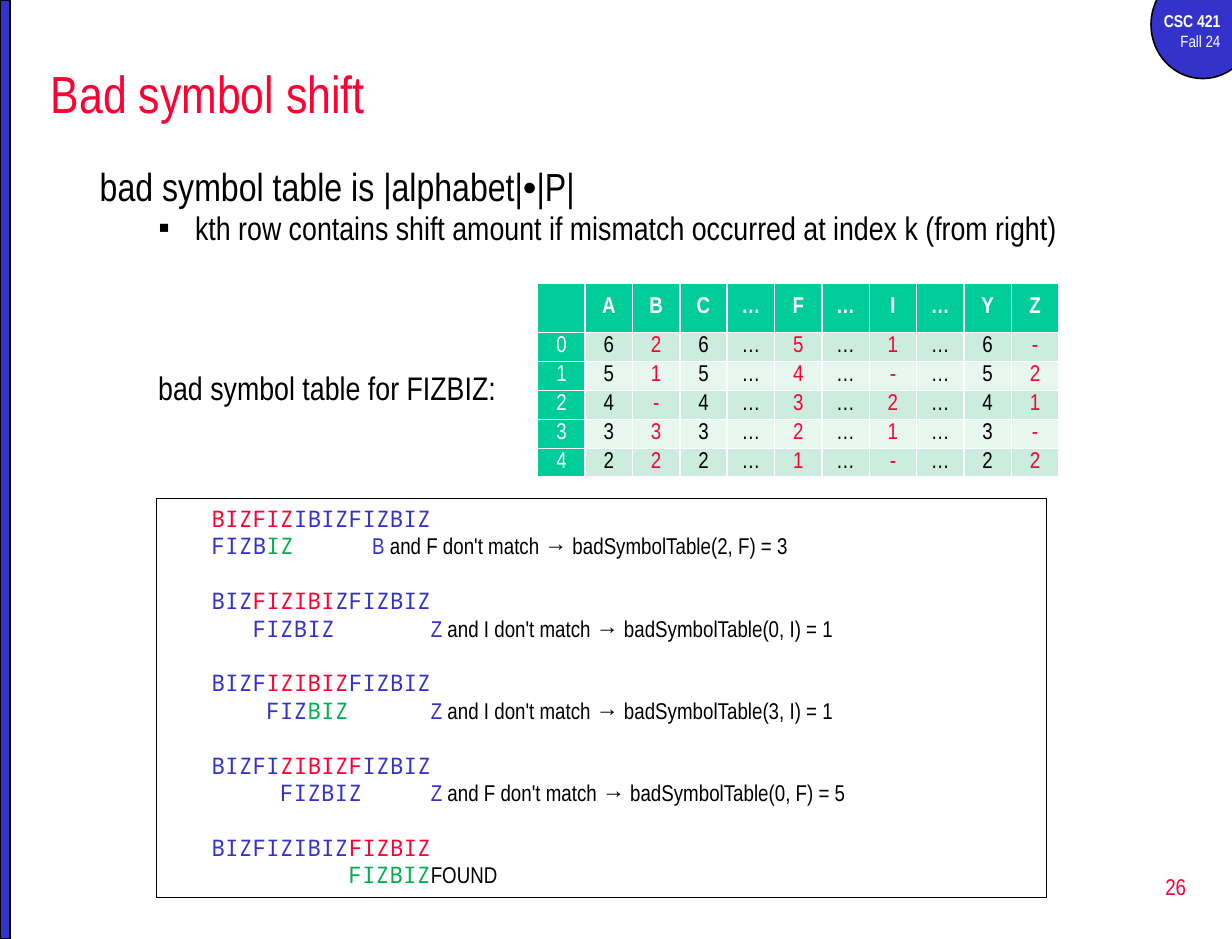
from lxml.etree import SubElement
from pptx import Presentation
from pptx.dml.color import RGBColor
from pptx.enum.shapes import MSO_SHAPE as Shape
from pptx.enum.text import MSO_ANCHOR as Anchor, MSO_AUTO_SIZE as AutoSize, PP_ALIGN as Align
from pptx.oxml.ns import qn
from pptx.util import Pt

COLORS = {"red": "FF0033", "blue": "3333CC", "green": "00B050", "black": "000000",
          "white": "FFFFFF", "head": "00CC99", "odd": "CBECDE", "even": "E7F6EF"}
NARROW, MONO = "Arial Narrow", "Noto Sans Mono"
TEXT, PATTERN = "BIZFIZIBIZFIZBIZ", "FIZBIZ"
CHAR_WIDTH, LINE_HEIGHT = 8.4, 16.8
SYMBOLS = ["", *"ABC…F…I…YZ"]
SHIFTS = ["0626…5…1…6-", "1515…4…-…52", "24-4…3…2…41", "3333…2…1…3-", "4222…1…-…22"]
RED_COLUMNS = {"B", "F", "I", "Z"}
TRACE = [
    (0, 2, "B", " and F don't match → badSymbolTable(2, F) = 3"),
    (3, 0, "Z", " and I don't match → badSymbolTable(0, I) = 1"),
    (4, 3, "Z", " and I don't match → badSymbolTable(3, I) = 1"),
    (5, 0, "Z", " and F don't match → badSymbolTable(0, F) = 5"),
    (10, 6, "", "FOUND"),
]


def color(name):
    return RGBColor.from_string(COLORS[name])


def apply(target, values):
    for name, value in values.items():
        setattr(target, name, value)


class SlideWriter:
    def __init__(self, page):
        self.page = page

    def span(self, para, text, size, ink="black", face=NARROW, bold=False):
        span = para.add_run()
        span.text = text
        apply(span.font, {"name": face, "size": Pt(size), "bold": bold})
        span.font.color.rgb = color(ink)

    def para(self, frame, spans, indent=None, bullet=None, **values):
        first = frame.paragraphs[0]
        para = frame.add_paragraph() if first.runs else first
        apply(para, {"alignment": Align.LEFT, **values})
        props = para._p.get_or_add_pPr()
        if indent:
            for name, value in zip(("marL", "indent"), indent):
                props.set(name, str(int(Pt(value))))
        if bullet:
            SubElement(props, qn("a:buFont")).set("typeface", "Arial")
            SubElement(props, qn("a:buChar")).set("char", bullet)
        else:
            SubElement(props, qn("a:buNone"))
        for span in spans:
            self.span(para, *span)

    def frame(self, box, anchor=Anchor.TOP):
        apply(box.text_frame, {"word_wrap": True, "auto_size": AutoSize.NONE,
                               "vertical_anchor": anchor})
        return box.text_frame

    def placeholder(self, index, area, anchor=Anchor.TOP):
        box = self.page.placeholders[index]
        apply(box, dict(zip(("left", "top", "width", "height"), map(Pt, area))))
        return self.frame(box, anchor)

    def text(self, area, anchor=Anchor.TOP):
        return self.frame(self.page.shapes.add_textbox(*map(Pt, area)), anchor)

    def shape(self, kind, area, fill=None, width=1):
        box = self.page.shapes.add_shape(kind, *map(Pt, area))
        box.shadow.inherit = False
        if fill:
            box.fill.solid()
            box.fill.fore_color.rgb = color(fill)
        else:
            box.fill.background()
        box.line.color.rgb = color("black")
        box.line.width = Pt(width)
        return self.frame(box)

    def cell(self, cell, text, fill, ink, bold):
        apply(cell, {"margin_top": 0, "margin_bottom": 0, "vertical_anchor": Anchor.MIDDLE})
        cell.fill.solid()
        cell.fill.fore_color.rgb = color(fill)
        if text:
            self.para(cell.text_frame, [(text, 14, ink, NARROW, bold)], alignment=Align.CENTER)

    def table(self, area, rows, head_height):
        table = self.page.shapes.add_table(len(rows), len(rows[0]), *map(Pt, area)).table
        for column in table.columns:
            column.width = Pt(area[2] / len(rows[0]))
        for number, row in enumerate(rows):
            body_height = (area[3] - head_height) / (len(rows) - 1)
            table.rows[number].height = Pt(body_height if number else head_height)
            for place, text in enumerate(row):
                heading = number == 0 or place == 0
                fill = "head" if heading else "odd" if number % 2 else "even"
                ink = "white" if heading else "red" if rows[0][place] in RED_COLUMNS else "black"
                self.cell(table.cell(number, place), text, fill, ink, number == 0)

    def trace(self, frame):
        margin, hang = 53.3, -26.6
        for number, (shift, matched, symbol, message) in enumerate(TRACE):
            end, split = shift + len(PATTERN), len(PATTERN) - matched
            window = [(TEXT[:shift], "blue"), (TEXT[shift:end], "red"), (TEXT[end:], "blue")]
            self.para(frame, [(part, 14, ink, MONO) for part, ink in window if part],
                      (margin, hang), space_before=Pt(LINE_HEIGHT if number else 0))
            tabs = "\t" if end * CHAR_WIDTH + hang > 72 else "\t\t"
            pieces = [(PATTERN[:split], "blue", MONO), (PATTERN[split:] + tabs, "green", MONO),
                      (symbol, "blue", NARROW), (message, "black", NARROW)]
            self.para(frame, [(part, 14, ink, face) for part, ink, face in pieces if part],
                      (margin, hang + shift * CHAR_WIDTH))


def main():
    deck = Presentation()
    apply(deck, {"slide_width": Pt(756), "slide_height": Pt(576)})
    writer = SlideWriter(deck.slides.add_slide(deck.slide_layouts[1]))

    writer.shape(Shape.OVAL, (706.3, -18, 63.4, 66.2), "blue")
    course = writer.text((696.2, 2.9, 59.8, 33.1))
    writer.para(course, [("CSC 421", 10.5, "white", NARROW, True)], alignment=Align.RIGHT)
    writer.para(course, [("Fall 24", 10, "white")], alignment=Align.RIGHT)
    writer.shape(Shape.RECTANGLE, (0, 0, 6, 576), "blue")

    title = writer.placeholder(0, (24, 30, 714, 54), Anchor.MIDDLE)
    writer.para(title, [("Bad symbol shift", 32, "red")])
    body = writer.placeholder(1, (54, 96, 685.5, 78))
    writer.para(body, [("bad symbol table is |alphabet|", 24), ("•", 24, "black", "Arial"),
                       ("|P|", 24)], (27, -27))
    writer.para(body, [("kth row contains shift amount if mismatch occurred at index k "
                        "(from right)", 20)], (58.5, -22.5), "▪", level=1, line_spacing=0.8)

    number = writer.text((577.5, 525, 157.5, 38), Anchor.MIDDLE)
    writer.para(number, [("26", 14, "red")], alignment=Align.RIGHT)
    writer.table((330, 174, 319.7, 118.8), [SYMBOLS, *SHIFTS], 30)
    label = writer.text((90, 222, 234, 31.5))
    writer.para(label, [("bad symbol table for FIZBIZ:", 20)])
    writer.trace(writer.shape(Shape.RECTANGLE, (96, 306, 546, 244.8), width=0.75))
    deck.save("out.pptx")


if __name__ == "__main__":
    main()
